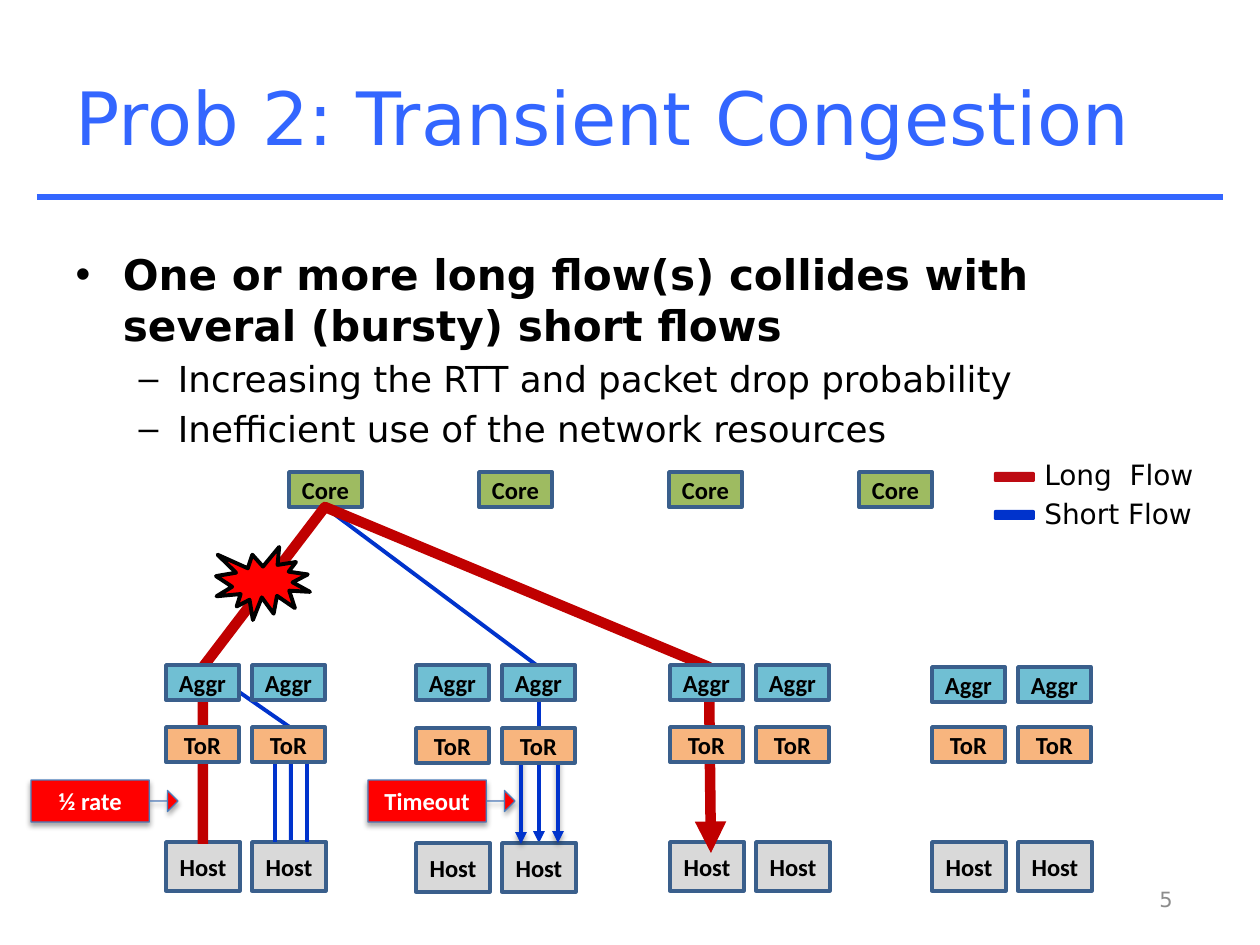
from lxml import etree
from pptx import Presentation
from pptx import util as u
from pptx.dml.color import RGBColor
from pptx.enum import shapes, text
from pptx.oxml.ns import qn

PX = 914400 // 126
SANS, LABEL = "DejaVu Sans", "Calibri"
TITLE_BLUE, SHORT_BLUE, LONG_RED = "3366FF", "0033CC", "C00000"
EDGE = "3A5F8C"

TITLE = "Prob 2: Transient Congestion"
BULLETS = [
    (0, "One or more long flow(s) collides with several (bursty) short flows"),
    (1, "Increasing the RTT and packet drop probability"),
    (1, "Inefficient use of the network resources"),
]
LEVEL_STYLE = [(24.1, True), (20.4, False)]
LEGEND = [("Long  Flow", "BD0A12"), ("Short Flow", SHORT_BLUE)]

FILLS = {"Core": "9EBB61", "Aggr": "70BFD3", "ToR": "F8B57E", "Host": "D9D9D9"}
SIZES = {"Core": (73, 35), "Aggr": (73, 35), "ToR": (73, 35), "Host": (74, 49)}
CORES, CORE_LEFT, CORE_STEP, CORE_TOP = 4, 289, 190, 472
PAIR_STEP = 86
PODS = [
    {"left": 166, "Aggr": 665, "ToR": 727, "Host": 842},
    {"left": 416, "Aggr": 665, "ToR": 728, "Host": 843},
    {"left": 670, "Aggr": 665, "ToR": 727, "Host": 842},
    {"left": 932, "Aggr": 667, "ToR": 727, "Host": 842},
]

SHORT_FLOW = [(291, 842), (291, 728), (203, 667), (326, 508), (539, 667), (539, 843)]
# points, colour, width, arrow at the end
FLOWS = [
    ([(203, 844), (203, 667), (325, 507), (709, 667), (711, 853)], LONG_RED, 6, True),
    ([(201, 844), (201, 667), (323, 507), (707, 667), (711, 852)], LONG_RED, 3, True),
    ([(275, 842), (275, 761), (289, 728)], SHORT_BLUE, 2.25, False),
    ([(307, 842), (307, 761), (290, 728)], SHORT_BLUE, 2.25, False),
]
BURST_ARROWS = [(521, 732, 844), (558, 731, 843)]
CALLOUTS = [("½ rate", 31), ("Timeout", 368)]

prs = Presentation()
prs.slide_width, prs.slide_height = u.Inches(10), u.Inches(7.5)
slide = prs.slides.add_slide(prs.slide_layouts[1])


def px(*values):
    return [v * PX for v in values]


def rgb(value):
    return RGBColor.from_string(value)


def style_runs(p, size, colour, font=SANS, bold=False):
    for r in p.runs:
        r.font.size, r.font.name, r.font.bold = u.Pt(size), font, bold
        r.font.color.rgb = rgb(colour)


def set_line(sp, colour, width, arrow=False):
    sp.line.color.rgb = rgb(colour)
    sp.line.width = u.Pt(width)
    if arrow:
        etree.SubElement(sp.line._get_or_add_ln(), qn("a:tailEnd"), type="triangle")


def set_effects(sp, shadow=False):
    """Replace the theme's shadow by none, or by a soft one below."""
    effects = etree.SubElement(sp._element.spPr, qn("a:effectLst"))
    if shadow:
        outer = etree.SubElement(
            effects, qn("a:outerShdw"), blurRad=str(u.Pt(3.1)),
            dist=str(u.Pt(1.8)), dir="5400000", rotWithShape="0")
        black = etree.SubElement(outer, qn("a:srgbClr"), val="000000")
        etree.SubElement(black, qn("a:alpha"), val="35000")


def add_shape(kind, box, fill, edge=None, width=2, shadow=False):
    sp = slide.shapes.add_shape(kind, *px(*box))
    sp.fill.solid()
    sp.fill.fore_color.rgb = rgb(fill)
    if edge:
        set_line(sp, edge, width)
    else:
        sp.line.fill.background()
    set_effects(sp, shadow)
    return sp


def add_label(sp, words, colour="000000"):
    tf = sp.text_frame
    tf.text = words
    tf.word_wrap = False
    tf.margin_left = tf.margin_right = tf.margin_top = tf.margin_bottom = 0
    tf.vertical_anchor = text.MSO_ANCHOR.MIDDLE
    p = tf.paragraphs[0]
    p.alignment = text.PP_ALIGN.CENTER
    style_runs(p, 14, colour, LABEL, True)


def add_node(name, left, top):
    sp = add_shape(shapes.MSO_SHAPE.RECTANGLE, (left, top, *SIZES[name]), FILLS[name], EDGE)
    add_label(sp, name)


def add_tier(name):
    for pod in PODS:
        for i in range(2):
            add_node(name, pod["left"] + i * PAIR_STEP, pod[name])


def add_flow(points, colour, width, arrow):
    builder = slide.shapes.build_freeform(*points[0], scale=PX)
    builder.add_line_segments(points[1:], close=False)
    sp = builder.convert_to_shape()
    sp.fill.background()
    set_line(sp, colour, width, arrow)
    set_effects(sp)


def add_straight(start, end, colour, width, arrow=False, shadow=False):
    line = slide.shapes.add_connector(shapes.MSO_CONNECTOR.STRAIGHT, *px(*start, *end))
    set_line(line, colour, width, arrow)
    set_effects(line, shadow)


def add_text(words, box, size, colour):
    tf = slide.shapes.add_textbox(*px(*box)).text_frame
    tf.word_wrap = True
    tf.text = words
    style_runs(tf.paragraphs[0], size, colour)
    return tf


def place(sp, *box):
    sp.left, sp.top, sp.width, sp.height = px(*box)


add_straight((37, 197), (1223, 197), TITLE_BLUE, 3)

title, body = slide.shapes.title, slide.placeholders[1]
place(title, 63, 38, 1134, 157)
title.text_frame.text = TITLE
title.text_frame.auto_size = text.MSO_AUTO_SIZE.NONE
title.text_frame.paragraphs[0].alignment = text.PP_ALIGN.LEFT
style_runs(title.text_frame.paragraphs[0], 42, TITLE_BLUE)

place(body, 63, 242, 1134, 210)
tf = body.text_frame
tf.text = "\n".join(words for _, words in BULLETS)
tf.auto_size = text.MSO_AUTO_SIZE.NONE
for p, (level, _) in zip(tf.paragraphs, BULLETS):
    size, bold = LEVEL_STYLE[level]
    p.level = level
    style_runs(p, size, "000000", bold=bold)

for i, (words, colour) in enumerate(LEGEND):
    add_shape(shapes.MSO_SHAPE.ROUNDED_RECTANGLE, (994, 472 + 38 * i, 41, 10), colour)
    add_text(words, (1032, 451 + 39 * i, 186, 66), 16, "000000")

add_flow(SHORT_FLOW, SHORT_BLUE, 2.25, True)
for i in range(CORES):
    add_node("Core", CORE_LEFT + i * CORE_STEP, CORE_TOP)
add_tier("Host")
for flow in FLOWS:
    add_flow(*flow)
for x, top, bottom in BURST_ARROWS:
    add_straight((x, top), (x, bottom), SHORT_BLUE, 2.25, arrow=True, shadow=True)
add_tier("Aggr")
add_tier("ToR")

add_shape(shapes.MSO_SHAPE.EXPLOSION1, (216, 547, 94, 73), "FF0000", "000000", 2.25)
for words, left in CALLOUTS:
    sp = add_shape(shapes.MSO_SHAPE.RIGHT_ARROW_CALLOUT, (left, 780, 147, 42),
                   "FF0000", "4B7EBC", 0.75, shadow=True)
    for i, value in enumerate((0, 0.25, 0.25, 0.805)):
        sp.adjustments[i] = value
    add_label(sp, words, "FFFFFF")

number = add_text("5", (891, 874, 294, 50), 12, "8C8C8C")
number.vertical_anchor = text.MSO_ANCHOR.MIDDLE
number.paragraphs[0].alignment = text.PP_ALIGN.RIGHT

prs.save("out.pptx")
